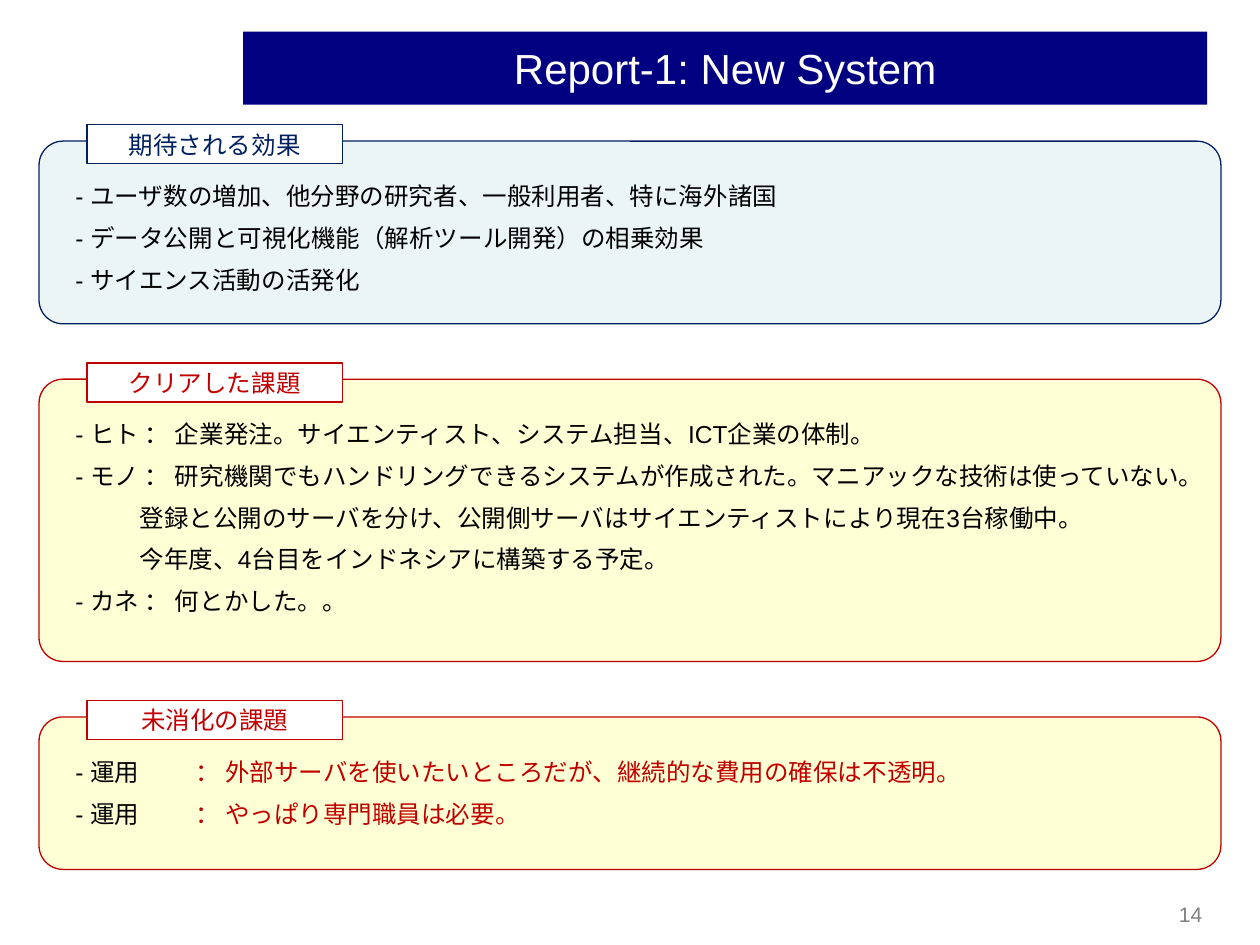
import pptx
import pptx.dml.color
import pptx.enum.shapes
import pptx.enum.text
import pptx.oxml.ns
import pptx.util
from lxml import etree

RGBColor = pptx.dml.color.RGBColor
Inches = pptx.util.Inches
Pt = pptx.util.Pt
SHAPES = pptx.enum.shapes.MSO_SHAPE
ALIGN = pptx.enum.text.PP_ALIGN
MIDDLE = pptx.enum.text.MSO_ANCHOR.MIDDLE
qn = pptx.oxml.ns.qn

WHITE = RGBColor(0xFF, 0xFF, 0xFF)
BLACK = RGBColor(0x00, 0x00, 0x00)
GREY = RGBColor(0x80, 0x80, 0x80)
TITLE_BLUE = RGBColor(0x00, 0x00, 0x80)
NAVY = RGBColor(0x00, 0x20, 0x60)
RED = RGBColor(0xC0, 0x00, 0x00)
PALE_BLUE = RGBColor(0xDA, 0xED, 0xEF)
PALE_YELLOW = RGBColor(0xFF, 0xFF, 0xCC)

FONT = "Arial"
PANEL_LEFT, PANEL_WIDTH = 0.31, 9.38
CORNER_RADIUS = 0.19
ITEM_INDENT, DETAIL_INDENT, TAB_STOP = 0.05, 0.56, 0.73

# Each item is (kind, text); a "topic" item has a label and a red remark.
PANELS = [
    (1.12, 1.45, "期待される効果", NAVY, PALE_BLUE, 50, [
        ("item", "- ユーザ数の増加、他分野の研究者、一般利用者、特に海外諸国"),
        ("item", "- データ公開と可視化機能（解析ツール開発）の相乗効果"),
        ("item", "- サイエンス活動の活発化"),
    ]),
    (3.01, 2.24, "クリアした課題", RED, PALE_YELLOW, 80, [
        ("item", "- ヒト ： 企業発注。サイエンティスト、システム担当、ICT企業の体制。"),
        ("item", "- モノ ： 研究機関でもハンドリングできるシステムが作成された。"
                 "マニアックな技術は使っていない。"),
        ("detail", "登録と公開のサーバを分け、公開側サーバはサイエンティストにより現在3台稼働中。"),
        ("detail", "今年度、4台目をインドネシアに構築する予定。"),
        ("item", "- カネ ： 何とかした。。"),
    ]),
    (5.69, 1.21, "未消化の課題", RED, PALE_YELLOW, 80, [
        ("topic", ("- 運用", "： 外部サーバを使いたいところだが、継続的な費用の確保は不透明。")),
        ("topic", ("- 運用", "： やっぱり専門職員は必要。")),
    ]),
]


def style(paragraph, size, color):
    paragraph.font.name = FONT
    paragraph.font.size = Pt(size)
    paragraph.font.color.rgb = color


def add_box(slide, kind, box, fill, line=None):
    shape = slide.shapes.add_shape(kind, *map(Inches, box))
    shape.shadow.inherit = False
    shape.fill.solid()
    shape.fill.fore_color.rgb = fill
    if line is None:
        shape.line.fill.background()
    else:
        shape.line.color.rgb = line
        shape.line.width = Pt(0.75)
    return shape


def write_line(shape, text, size, color, alignment):
    frame = shape.text_frame
    frame.word_wrap = True
    frame.vertical_anchor = MIDDLE
    paragraph = frame.paragraphs[0]
    paragraph.text = text
    paragraph.alignment = alignment
    style(paragraph, size, color)


def set_opacity(shape, percent):
    color = shape.fill._xPr.find(qn("a:solidFill"))[0]
    etree.SubElement(color, qn("a:alpha")).set("val", str(percent * 1000))


def set_indent(paragraph, kind):
    """Indent only the first line, so wrapped lines return to the margin."""
    properties = paragraph._p.get_or_add_pPr()
    indent = DETAIL_INDENT if kind == "detail" else ITEM_INDENT
    properties.set("marL", "0")
    properties.set("indent", str(Inches(indent)))
    if kind == "topic":
        tabs = etree.SubElement(properties, qn("a:tabLst"))
        etree.SubElement(tabs, qn("a:tab"), pos=str(Inches(TAB_STOP)), algn="l")


def add_items(slide, box, items):
    frame = slide.shapes.add_textbox(*map(Inches, box)).text_frame
    frame.word_wrap = True
    for index, (kind, text) in enumerate(items):
        paragraph = frame.add_paragraph() if index else frame.paragraphs[0]
        if index:
            paragraph.space_before = Pt(7)
        set_indent(paragraph, kind)
        style(paragraph, 14, BLACK)
        if kind == "topic":
            label, remark = text
            paragraph.add_run().text = label + "\t"
            run = paragraph.add_run()
            run.text = remark
            run.font.color.rgb = RED
        else:
            paragraph.add_run().text = text


def add_panel(slide, box, heading, accent, fill, opacity, items):
    left, top, width, height = box
    panel = add_box(slide, SHAPES.ROUNDED_RECTANGLE, box, fill, accent)
    panel.adjustments[0] = CORNER_RADIUS / height
    set_opacity(panel, opacity)
    tag = add_box(slide, SHAPES.RECTANGLE,
                  (left + 0.38, top - 0.13, 2.03, 0.31), WHITE, accent)
    write_line(tag, heading, 14, accent, ALIGN.CENTER)
    add_items(slide, (left + 0.14, top + 0.27, width - 0.28, height - 0.4), items)


def add_title(slide, box):
    title = add_box(slide, SHAPES.RECTANGLE, box, TITLE_BLUE)
    write_line(title, "Report-1: New System", 24, WHITE, ALIGN.CENTER)


def add_page_number(slide, box):
    number = slide.shapes.add_textbox(*map(Inches, box))
    write_line(number, "14", 12, GREY, ALIGN.RIGHT)


def main():
    presentation = pptx.Presentation()
    presentation.slide_width = Inches(10)
    presentation.slide_height = Inches(7.5)
    slide = presentation.slides.add_slide(presentation.slide_layouts[6])
    add_title(slide, (1.93, 0.25, 7.65, 0.58))
    for top, height, *content in PANELS:
        add_panel(slide, (PANEL_LEFT, top, PANEL_WIDTH, height), *content)
    add_page_number(slide, (9.09, 7.09, 0.55, 0.33))
    presentation.save("out.pptx")


if __name__ == "__main__":
    main()
